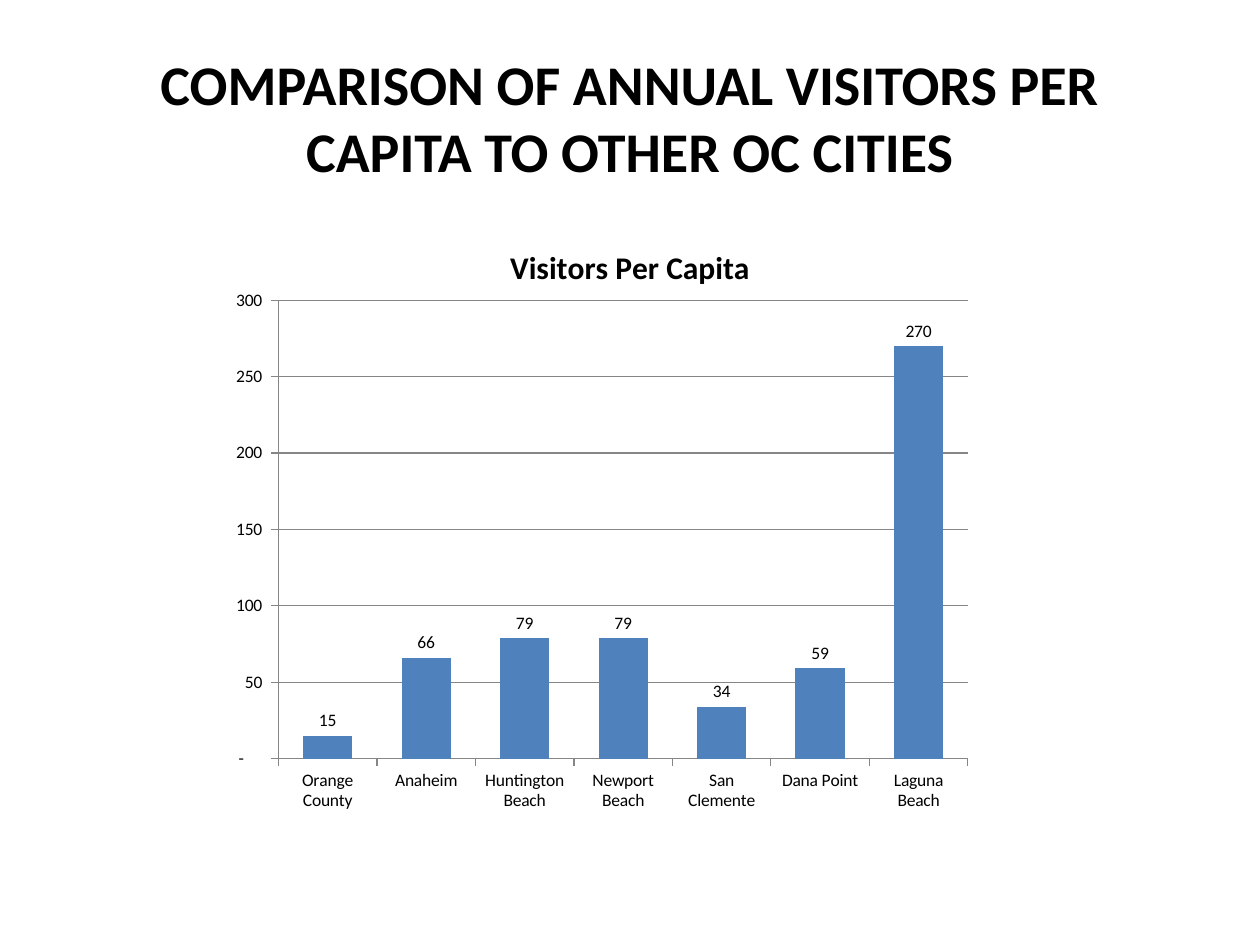
from lxml import etree
from pptx import Presentation
from pptx.chart.data import CategoryChartData
from pptx.dml.color import RGBColor
from pptx.enum.chart import XL_CHART_TYPE, XL_LABEL_POSITION, XL_TICK_MARK
from pptx.enum.text import MSO_ANCHOR, PP_ALIGN
from pptx.oxml.ns import qn
from pptx.util import Inches, Pt

TITLE = "COMPARISON OF ANNUAL VISITORS PER CAPITA TO OTHER OC CITIES"
CHART_TITLE = "Visitors Per Capita"
VISITORS = {
    "Orange County": 15,
    "Anaheim": 66,
    "Huntington Beach": 79,
    "Newport Beach": 79,
    "San Clemente": 34,
    "Dana Point": 59,
    "Laguna Beach": 270,
}
COLORS = {"text": "000000", "bar": "4F81BD", "line": "868686"}
FONT = "Calibri"
NUMBER_FORMAT = '_(* #,##0_);_(* \\(#,##0\\);_(* "-"??_);_('
PLOT = {"x": 0.19, "y": 0.128, "w": 0.608, "h": 0.735}


def rgb(name):
    return RGBColor.from_string(COLORS[name])


def style_font(font, size, bold=False):
    font.name, font.size, font.bold = FONT, Pt(size), bold
    font.color.rgb = rgb("text")


def write(tf, text, size=10, bold=False, align=PP_ALIGN.CENTER):
    p = tf.paragraphs[0]
    p.alignment = align
    r = p.add_run()
    r.text = text
    style_font(r.font, size, bold)


def place_plot(chart):
    """Fix the inner plot area as fractions of the chart frame."""
    area = chart.plots[0]._element.getparent()
    for old in area.findall(qn("c:layout")):
        area.remove(old)
    layout = etree.Element(qn("c:layout"))
    manual = etree.SubElement(layout, qn("c:manualLayout"))
    settings = {"layoutTarget": "inner", "xMode": "edge", "yMode": "edge", **PLOT}
    for tag, value in settings.items():
        etree.SubElement(manual, qn(f"c:{tag}")).set("val", str(value))
    area.insert(0, layout)


def add_title(s):
    sp = s.shapes.add_textbox(Inches(0.5), Inches(0.3), Inches(9), Inches(1.25))
    tf = sp.text_frame
    tf.word_wrap = True
    tf.vertical_anchor = MSO_ANCHOR.MIDDLE
    write(tf, TITLE, size=32, bold=True)


def add_visitor_chart(s):
    data = CategoryChartData()
    data.categories = list(VISITORS)
    data.add_series("Series 1", list(VISITORS.values()))
    chart = s.shapes.add_chart(
        XL_CHART_TYPE.COLUMN_CLUSTERED,
        Inches(0.5), Inches(1.75), Inches(9), Inches(4.95), data,
    ).chart
    style_font(chart.font, 10)
    chart.has_legend = False
    chart.has_title = True
    write(chart.chart_title.text_frame, CHART_TITLE, size=18, bold=True)
    chart.chart_title.include_in_layout = False
    place_plot(chart)

    plot = chart.plots[0]
    plot.gap_width = 100
    plot.vary_by_categories = False
    series = plot.series[0]
    series.format.fill.solid()
    series.format.fill.fore_color.rgb = rgb("bar")
    labels = series.data_labels
    labels.show_value = True
    labels.position = XL_LABEL_POSITION.OUTSIDE_END
    labels.number_format = NUMBER_FORMAT
    labels.number_format_is_linked = False
    style_font(labels.font, 10)

    values = chart.value_axis
    values.minimum_scale, values.maximum_scale, values.major_unit = 0, 300, 50
    values.tick_labels.number_format = NUMBER_FORMAT
    values.tick_labels.number_format_is_linked = False
    values.has_major_gridlines = True
    for axis in (values, chart.category_axis):
        axis.major_tick_mark = XL_TICK_MARK.OUTSIDE
        axis.minor_tick_mark = XL_TICK_MARK.NONE
    for part in (values, chart.category_axis, values.major_gridlines):
        part.format.line.color.rgb = rgb("line")
        part.format.line.width = Pt(0.75)


def main():
    prs = Presentation()
    prs.slide_width, prs.slide_height = Inches(10), Inches(7.5)
    s = prs.slides.add_slide(prs.slide_layouts[6])
    add_title(s)
    add_visitor_chart(s)
    prs.save("out.pptx")


if __name__ == "__main__":
    main()
